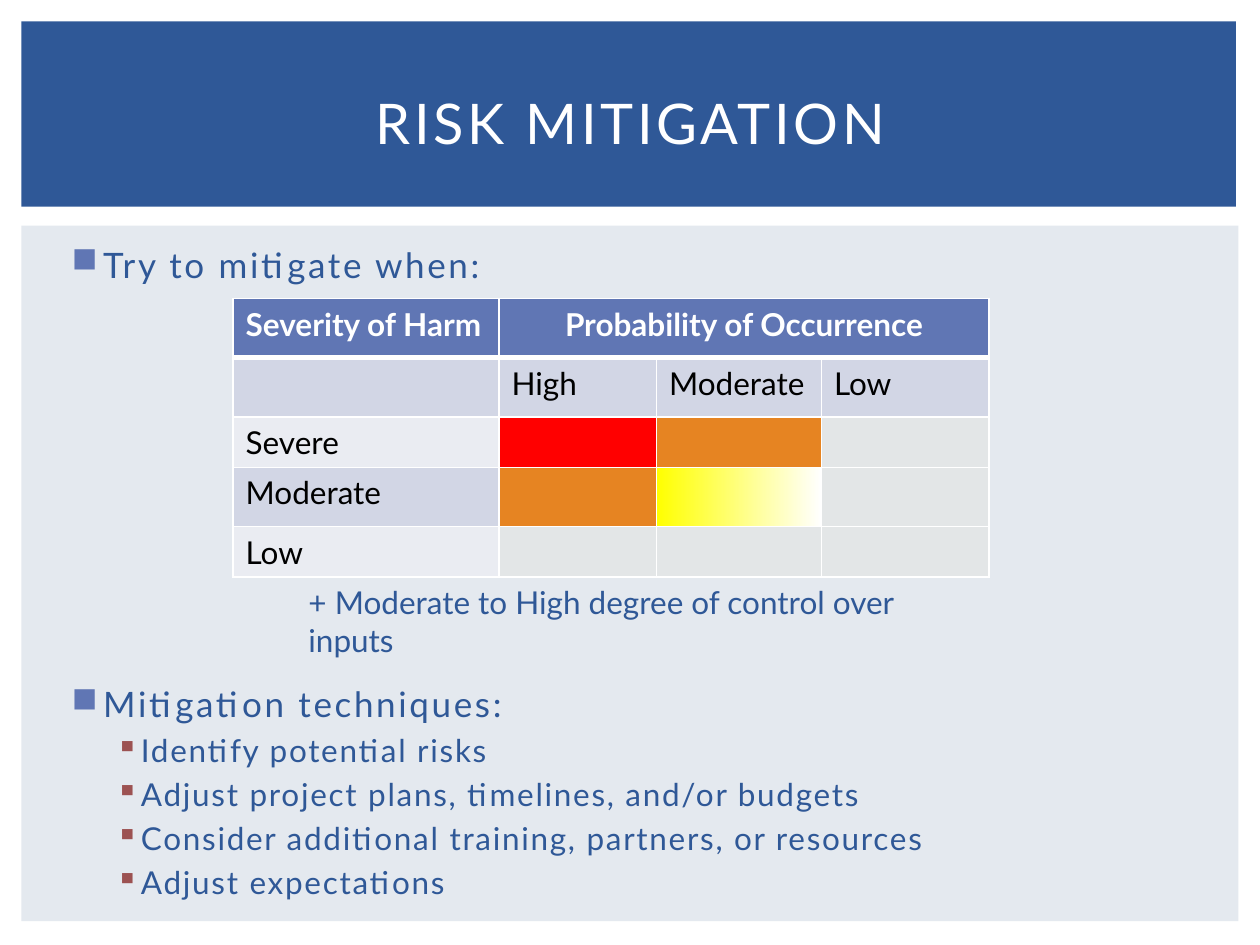
from lxml import etree
from pptx import Presentation
from pptx.dml.color import RGBColor
from pptx.enum import shapes, text
from pptx.oxml import ns
from pptx.util import Inches, Pt

FONT = "Lato"
BLUE, WHITE, BLACK = "2F5897", "FFFFFF", "000000"
HEAD, BAND, PALE = "6076B4", "D2D6E5", "EAECF2"
RED, ORANGE, YELLOW, GREY = "FF0000", "E68422", "FFFF00", "E3E6E7"

ROWS = [
    ["Severity of Harm", "Probability of Occurrence", "", ""],
    ["", "High", "Moderate", "Low"],
    ["Severe", "", "", ""],
    ["Moderate", "", "", ""],
    ["Low", "", "", ""],
]
FILLS = [
    [HEAD] * 4,
    [BAND] * 4,
    [PALE, RED, ORANGE, GREY],
    [BAND, ORANGE, (YELLOW, WHITE), GREY],
    [PALE, GREY, GREY, GREY],
]
TIPS = [
    "Identify potential risks",
    "Adjust project plans, timelines, and/or budgets",
    "Consider additional training, partners, or resources",
    "Adjust expectations",
]


def rgb(code):
    return RGBColor.from_string(code)


def sub(node, tag, **attrs):
    return etree.SubElement(node, ns.qn(tag), **attrs)


def style(para, size, color, bold=False):
    font = para.font
    font.name, font.size, font.bold = FONT, Pt(size), bold
    font.color.rgb = rgb(color)


def track(para, points):
    """Letter spacing of every run."""
    for run in para.runs:
        run.font._element.set("spc", str(int(points * 100)))


def indent(para, left, first=0.0):
    props = para._p.get_or_add_pPr()
    props.set("marL", str(Inches(left)))
    props.set("indent", str(Inches(first)))
    return props


def bullet(para, words, level=0):
    """First level: large square; second level: small square."""
    size, gap, left, hang, mark, tint = [
        (20, 1.5, 0.3, -0.25, "■", HEAD),
        (18, 1, 0.6, -0.2, "▪", "9C5252"),
    ][level]
    para.text, para.level = words, level
    para.space_before = Pt(size * 0.2)
    props = indent(para, left, hang)
    sub(sub(props, "a:buClr"), "a:srgbClr", val=tint)
    sub(props, "a:buChar", char=mark)
    style(para, size, BLUE)
    track(para, gap)


def panel(slide, box, color):
    shape = slide.shapes.add_shape(shapes.MSO_SHAPE.RECTANGLE, *map(Inches, box))
    shape.shadow.inherit = False
    shape.fill.solid()
    shape.fill.fore_color.rgb = rgb(color)
    shape.line.fill.background()


def textbox(slide, box):
    frame = slide.shapes.add_textbox(*map(Inches, box)).text_frame
    frame.word_wrap = True
    return frame


def title(slide, words):
    shape = slide.shapes.title
    shape.left, shape.top = Inches(0.42), Inches(0.39)
    shape.width, shape.height = Inches(9.17), Inches(1.15)
    frame = shape.text_frame
    frame.text = words
    frame.vertical_anchor = text.MSO_ANCHOR.MIDDLE
    para = frame.paragraphs[0]
    para.alignment = text.PP_ALIGN.CENTER
    style(para, 32, WHITE)
    track(para, 2)


def paint(cell, color):
    fill = cell.fill
    if isinstance(color, tuple):
        fill.gradient()
        fill.gradient_angle = 0
        for stop, code in zip(fill.gradient_stops, color):
            stop.color.rgb = rgb(code)
    else:
        fill.solid()
        fill.fore_color.rgb = rgb(color)


def border(cell, top, bottom):
    """White cell edges, widths in points."""
    props = cell._tc.get_or_add_tcPr()
    edges = [("L", 1), ("R", 1), ("T", top), ("B", bottom)]
    for spot, (side, width) in enumerate(edges):
        line = etree.Element(ns.qn("a:ln" + side), w=str(Pt(width)))
        sub(sub(line, "a:solidFill"), "a:srgbClr", val=WHITE)
        props.insert(spot, line)


def matrix(slide):
    box = map(Inches, (1.85, 2.37, 6, 2.21))
    table = slide.shapes.add_table(len(ROWS), len(ROWS[0]), *box).table
    for col, width in zip(table.columns, (2.11, 1.25, 1.31, 1.33)):
        col.width = Inches(width)
    for row, height in zip(table.rows, (0.47, 0.47, 0.4, 0.47, 0.4)):
        row.height = Inches(height)
    for r, (words, fills) in enumerate(zip(ROWS, FILLS)):
        for c, (word, color) in enumerate(zip(words, fills)):
            cell = table.cell(r, c)
            paint(cell, color)
            border(cell, 3 if r == 1 else 1, 3 if r == 0 else 1)
            if word:
                cell.text = word
                style(cell.text_frame.paragraphs[0], 18,
                      BLACK if r else WHITE, bold=r == 0)
    table.cell(0, 1).merge(table.cell(0, 3))
    table.cell(0, 1).text_frame.paragraphs[0].alignment = text.PP_ALIGN.CENTER


def main():
    prs = Presentation()
    prs.slide_width, prs.slide_height = Inches(10), Inches(7.5)
    slide = prs.slides.add_slide(prs.slide_layouts[5])

    # Background panels and title
    panel(slide, (0.17, 1.79, 9.66, 5.52), "E4E9EF")
    panel(slide, (0.17, 0.17, 9.64, 1.47), BLUE)
    tree = slide.shapes._spTree
    tree.append(slide.shapes.title._element)
    title(slide, "RISK MITIGATION")

    # When to mitigate
    frame = textbox(slide, (0.42, 1.88, 9.19, 0.6))
    bullet(frame.paragraphs[0], "Try to mitigate when:")
    matrix(slide)
    frame = textbox(slide, (1.85, 4.58, 6, 0.4))
    frame.auto_size = text.MSO_AUTO_SIZE.SHAPE_TO_FIT_TEXT
    note = frame.paragraphs[0]
    note.text = "+ Moderate to High degree of control over inputs"
    indent(note, 0.5)
    style(note, 18, BLUE)

    # How to mitigate
    frame = textbox(slide, (0.42, 5.37, 9.19, 1.81))
    bullet(frame.paragraphs[0], "Mitigation techniques:")
    for tip in TIPS:
        bullet(frame.add_paragraph(), tip, 1)

    prs.save("out.pptx")


if __name__ == "__main__":
    main()
